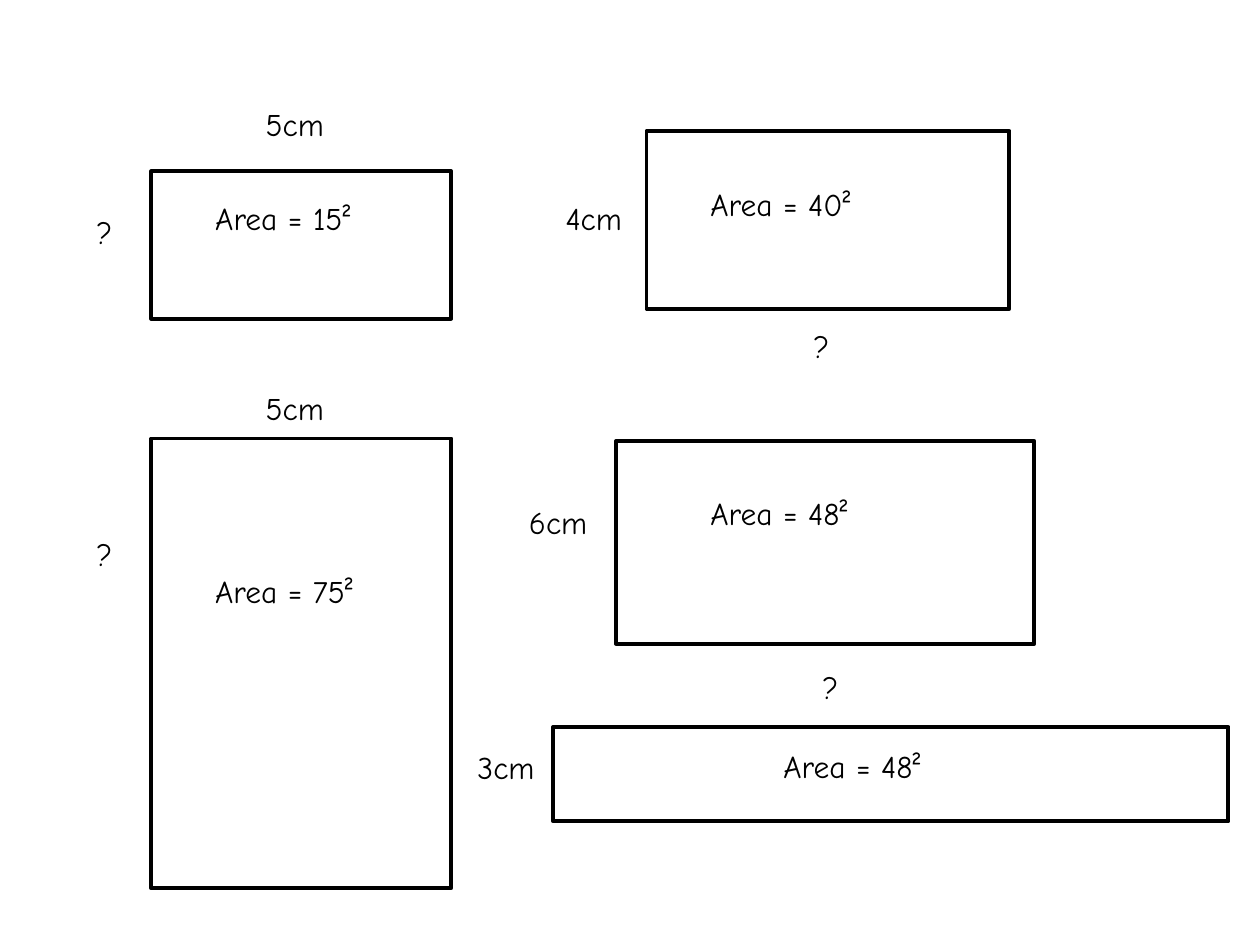
"""Build a worksheet of rectangles with a missing side to find from the area."""
from dataclasses import dataclass

from pptx import Presentation
from pptx.dml.color import RGBColor
from pptx.enum import shapes, text
from pptx.slide import Slide
from pptx.util import Pt

BLACK = RGBColor(0, 0, 0)
FONT = "Comic Neue"
SIDE = 50.4
HIGH = 28.8


@dataclass
class Label:
    words: str
    left: float
    top: float
    width: float = SIDE


@dataclass
class Box:
    left: float
    top: float
    width: float
    height: float
    labels: list[Label]


BOXES = [
    Box(86.4, 97.9, 171.4, 84.2, [
        Label("Area = 15²", 115.9, 110.2, 107.3),
        Label("5cm", 144.7, 56.2),
        Label("?", 48.2, 118.1),
    ]),
    Box(369.4, 74.9, 207.4, 101.5, [
        Label("Area = 40²", 398.9, 102.2, 124.6),
        Label("4cm", 316.1, 110.2),
        Label("?", 457.9, 183.6),
    ]),
    Box(86.4, 250.6, 171.4, 257, [
        Label("Area = 75²", 115.9, 323.3, 118.1),
        Label("5cm", 144.7, 218.9),
        Label("?", 48.2, 302.4),
    ]),
    Box(352.1, 252, 239, 115.9, [
        Label("Area = 48²", 398.9, 278.6, 136.1),
        Label("6cm", 295.2, 283.7),
        Label("?", 463, 378),
    ]),
    Box(316.1, 415.4, 385.9, 54, [
        Label("Area = 48²", 440.6, 423.4, 136.1),
        Label("3cm", 265.7, 424.1),
    ]),
]


def write(slide: Slide, words: str, *, left: float, top: float, width: float,
          size: float = 18, color: RGBColor = BLACK) -> None:
    """Add one line of text in a box that grows with it."""
    area = slide.shapes.add_textbox(Pt(left), Pt(top), Pt(width), Pt(HIGH))
    frame = area.text_frame
    frame.word_wrap = True
    frame.auto_size = text.MSO_AUTO_SIZE.SHAPE_TO_FIT_TEXT
    run = frame.paragraphs[0].add_run()
    run.text = words
    run.font.name = FONT
    run.font.size = Pt(size)
    run.font.color.rgb = color


def draw(slide: Slide, box: Box) -> None:
    """Draw an outlined rectangle and its labels."""
    rect = slide.shapes.add_shape(
        shapes.MSO_SHAPE.RECTANGLE,
        Pt(box.left), Pt(box.top), Pt(box.width), Pt(box.height))
    rect.shadow.inherit = False
    rect.fill.background()
    rect.line.color.rgb = BLACK
    rect.line.width = Pt(2.25)
    for label in box.labels:
        write(slide, label.words, left=label.left, top=label.top, width=label.width)


def main() -> None:
    """Build and save the slide."""
    deck = Presentation()
    deck.slide_width, deck.slide_height = Pt(720), Pt(540)
    slide = deck.slides.add_slide(deck.slide_layouts[6])
    for box in BOXES:
        draw(slide, box)
    deck.save("out.pptx")


if __name__ == "__main__":
    main()
